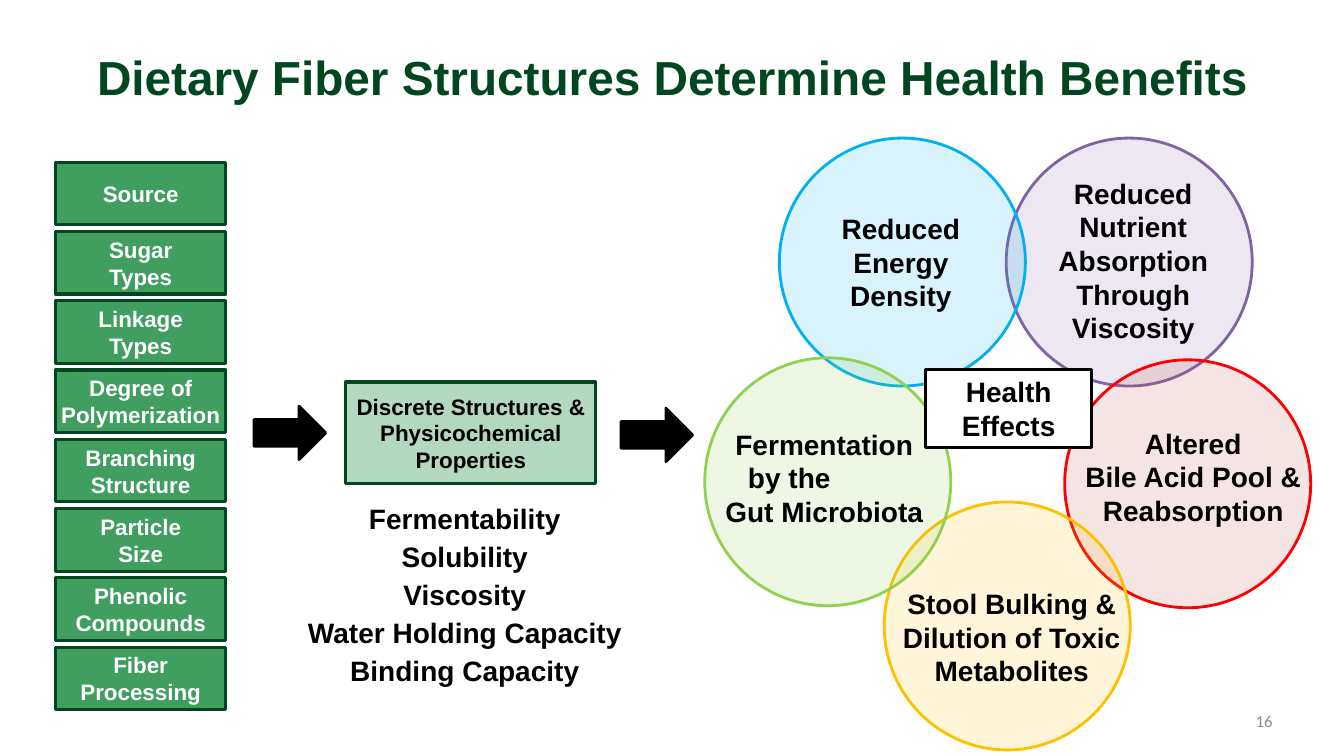
import pptx
import pptx.util
import pptx.dml.color
import pptx.enum.shapes
import pptx.enum.text
import pptx.oxml.ns
from lxml import etree

Inches, Pt = pptx.util.Inches, pptx.util.Pt
SHAPE = pptx.enum.shapes.MSO_SHAPE
ANCHOR = pptx.enum.text.MSO_ANCHOR
ALIGN = pptx.enum.text.PP_ALIGN
qn = pptx.oxml.ns.qn

# Content: each line of a text is a paragraph, a leading tab indents it
TITLE = "Dietary Fiber Structures Determine Health Benefits"
PAGE_NUMBER = "16"
FACTORS = ["Source", "Sugar\nTypes", "Linkage\nTypes", "Degree of Polymerization",
           "Branching Structure", "Particle\nSize", "Phenolic Compounds", "Fiber\nProcessing"]
STRUCTURES = "Discrete Structures & Physicochemical Properties"
PROPERTIES = "Fermentability\nSolubility\nViscosity\nWater Holding Capacity\nBinding Capacity"
HUB = "Health Effects"

# Circle left, top, fill, line; label text, left, top, width, height
EFFECTS = [
    (9.98, 1.37, "8064A2", "8064A2",
     "Reduced Nutrient Absorption Through Viscosity", 10.11, 1.7, 2.26, 1.78),
    (10.56, 3.57, "C0504D", "FF0000",
     "Altered\nBile Acid Pool &\nReabsorption", 10.66, 4.18, 2.35, 1.11),
    (7.73, 1.37, "00B0F0", "00B0F0",
     "Reduced Energy Density", 8.09, 2.05, 1.69, 1.11),
    (8.77, 4.98, "FFC000", "FFC000",
     "Stool Bulking & Dilution of Toxic Metabolites", 8.67, 5.77, 2.73, 1.11),
    (6.99, 3.55, "92D050", "92D050",
     "Fermentation\n\tby the\nGut Microbiota", 7.07, 4.19, 2.21, 1.11),
]
CIRCLE_WIDTH, CIRCLE_HEIGHT = 2.44, 2.46
TAB_STOP = 0.25
ARROWS = [(2.52, 4.03), (6.16, 4.05)]

# Factor column
COLUMN_LEFT, COLUMN_TOP, LAST_TOP = 0.55, 1.61, 6.42
BOX_WIDTH, BOX_HEIGHT = 1.69, 0.62
GREEN, DARK_GREEN, BLACK, WHITE = "409E5F", "004620", "000000", "FFFFFF"


def rgb(color):
    return pptx.dml.color.RGBColor.from_string(color)


def indent_by_tab(paragraph):
    paragraph.alignment = ALIGN.LEFT
    tabs = etree.SubElement(paragraph._p.get_or_add_pPr(), qn("a:tabLst"))
    etree.SubElement(tabs, qn("a:tab"), pos=str(Inches(TAB_STOP)), algn="l")


def write(shape, text, size, color=BLACK, anchor=ANCHOR.TOP, align=ALIGN.CENTER,
          font="Arial", bold=True, margin=None, space_after=0):
    frame = shape.text_frame
    frame.text = text
    frame.word_wrap = True
    frame.vertical_anchor = anchor
    if margin is not None:
        frame.margin_left = frame.margin_right = Inches(margin)
        frame.margin_top = frame.margin_bottom = Inches(margin)
    for paragraph in frame.paragraphs:
        paragraph.alignment = align
        paragraph.space_after = Pt(space_after)
        if paragraph.text.startswith("\t"):
            indent_by_tab(paragraph)
        paragraph.font.name = font
        paragraph.font.size = Pt(size)
        paragraph.font.bold = bold
        paragraph.font.color.rgb = rgb(color)


def add_text(slide, box, text, size, **style):
    shape = slide.shapes.add_textbox(*map(Inches, box))
    write(shape, text, size, **style)


def add_shape(slide, kind, box, fill, line, line_width, opacity=100):
    shape = slide.shapes.add_shape(kind, *map(Inches, box))
    shape.shadow.inherit = False
    shape.fill.solid()
    shape.fill.fore_color.rgb = rgb(fill)
    if opacity < 100:
        color = shape.fill._xPr.find(".//" + qn("a:srgbClr"))
        etree.SubElement(color, qn("a:alpha"), val=str(opacity * 1000))
    shape.line.color.rgb = rgb(line)
    shape.line.width = Pt(line_width)
    return shape


def main():
    presentation = pptx.Presentation()
    presentation.slide_width, presentation.slide_height = Inches(13.33), Inches(7.5)
    slide = presentation.slides.add_slide(presentation.slide_layouts[5])

    # Title and page number
    title = slide.shapes.title
    title.left, title.top, title.width, title.height = map(Inches, (0.67, 0.3, 12, 0.92))
    write(title, TITLE, 34.1, color=DARK_GREEN, anchor=ANCHOR.MIDDLE)
    add_text(slide, (9.61, 6.95, 3.11, 0.4), PAGE_NUMBER, 12, color="8C8C8C",
             anchor=ANCHOR.MIDDLE, align=ALIGN.RIGHT, font="Calibri", bold=False)

    # Overlapping circles, then their labels
    for left, top, fill, line, *_ in EFFECTS:
        add_shape(slide, SHAPE.OVAL, (left, top, CIRCLE_WIDTH, CIRCLE_HEIGHT),
                  fill, line, 2, opacity=15)
    for *_, text, left, top, width, height in EFFECTS:
        add_text(slide, (left, top, width, height), text, 20)

    hub = add_shape(slide, SHAPE.RECTANGLE, (9.18, 3.67, 1.65, 0.77), WHITE, BLACK, 2.25)
    write(hub, HUB, 20)

    # Column of factors
    pitch = (LAST_TOP - COLUMN_TOP) / (len(FACTORS) - 1)
    for row, factor in enumerate(FACTORS):
        box = (COLUMN_LEFT, COLUMN_TOP + row * pitch, BOX_WIDTH, BOX_HEIGHT)
        shape = add_shape(slide, SHAPE.RECTANGLE, box, GREEN, DARK_GREEN, 2.25)
        write(shape, factor, 16, color=WHITE, anchor=ANCHOR.MIDDLE, margin=0)

    # Structures, their properties and the arrows
    structures = add_shape(slide, SHAPE.RECTANGLE, (3.43, 3.79, 2.48, 1.01),
                           GREEN, DARK_GREEN, 2.25, opacity=40)
    write(structures, STRUCTURES, 16, anchor=ANCHOR.MIDDLE, margin=0)
    add_text(slide, (2.75, 4.93, 3.72, 1.95), PROPERTIES, 20, space_after=3)
    for left, top in ARROWS:
        add_shape(slide, SHAPE.RIGHT_ARROW, (left, top, 0.71, 0.53), BLACK, BLACK, 2)

    presentation.save("out.pptx")


if __name__ == "__main__":
    main()
